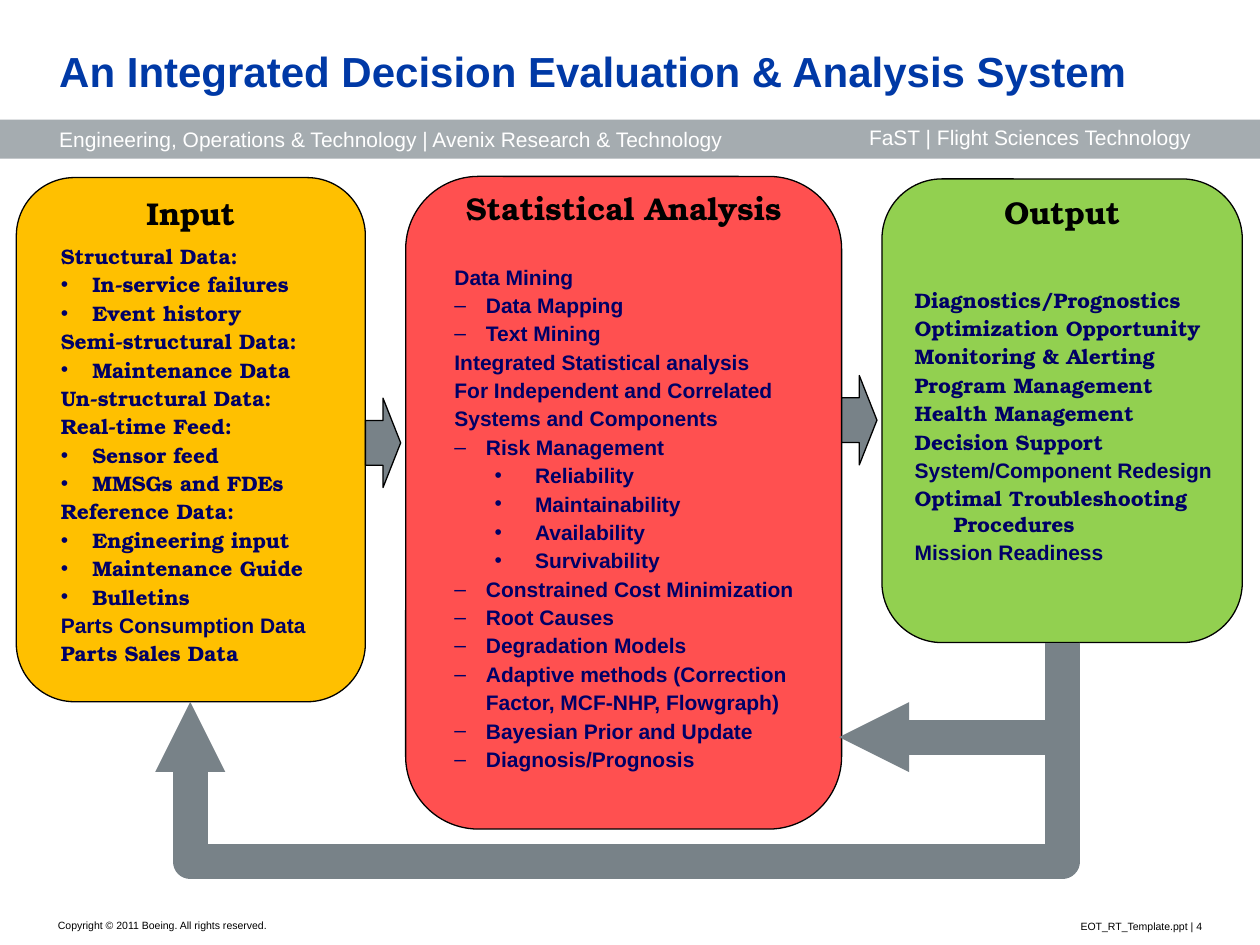
from lxml.etree import SubElement
from pptx import Presentation
from pptx.dml.color import RGBColor
from pptx.enum.shapes import MSO_CONNECTOR as Link, MSO_SHAPE as Kind
from pptx.enum.text import MSO_ANCHOR as Anchor, PP_ALIGN as Align
from pptx.oxml.ns import qn
from pptx.util import Inches, Pt

SANS, SERIF = "Arial", "TeX Gyre Bonum"
NAVY, GREY, BLACK, WHITE = "000066", "788288", "000000", "FFFFFF"

# A grid of 100 columns by 75 rows; boxes are (column, row, columns, rows)
deck = Presentation()
deck.slide_width, deck.slide_height = Inches(10), Inches(7.5)
COL, ROW = deck.slide_width / 100, deck.slide_height / 75


def place(box):
    x, y, w, h = box
    return round(x * COL), round(y * ROW), round(w * COL), round(h * ROW)


def paint(item, color):
    item.rgb = RGBColor.from_string(color)


def style(par, size, color, bold=False, face=SANS):
    for run in par.runs:
        font = run.font
        font.size, font.bold, font.name = Pt(size), bold, face
        paint(font.color, color)


def frame(shape, anchor, pads):
    text = shape.text_frame
    text.word_wrap, text.vertical_anchor = True, anchor
    (text.margin_left, text.margin_top,
     text.margin_right, text.margin_bottom) = map(Inches, pads)
    return text


def solid(slide, kind, box, fill, edge=None):
    shape = slide.shapes.add_shape(kind, *place(box))
    shape.shadow.inherit = False
    shape.fill.solid()
    paint(shape.fill.fore_color, fill)
    if edge:
        paint(shape.line.color, edge)
        shape.line.width = Pt(0.75)
    else:
        shape.line.fill.background()
    return shape


def label(slide, box, words, size, color, align=Align.LEFT, bold=False,
          face=SANS, anchor=Anchor.TOP, pads=(0.1, 0.05, 0.1, 0.05)):
    text = frame(slide.shapes.add_textbox(*place(box)), anchor, pads)
    text.text = words
    par = text.paragraphs[0]
    par.alignment = align
    style(par, size, color, bold, face)


def item(par, words, mark, left, hang, first):
    par.text = words
    par.alignment = Align.LEFT
    props = par._p.get_or_add_pPr()
    props.set("marL", str(Inches(left)))
    props.set("indent", str(Inches(hang)))
    if not first:
        gap = SubElement(props, qn("a:spcBef"))
        SubElement(gap, qn("a:spcPct"), val="15000")
    if mark:
        SubElement(props, qn("a:buFont"), typeface=SANS)
        SubElement(props, qn("a:buChar"), char=mark)
    else:
        SubElement(props, qn("a:buNone"))


def panel(slide, box, fill, head, drop, span, lines, face, steps, pads):
    """Rounded panel; each line starts with a mark that is a key of steps."""
    x, y, w, h = box
    shape = solid(slide, Kind.ROUNDED_RECTANGLE, box, fill, BLACK)
    text = frame(shape, Anchor.MIDDLE, pads)
    for i, line in enumerate(lines):
        par = text.add_paragraph() if i else text.paragraphs[0]
        key = line[0] if line[0] in steps else ""
        mark = key if key in ("•", "–") else ""
        words = line[len(key):]
        item(par, words, mark, *steps[key], first=not i)
        style(par, 12, NAVY, True, SANS if words in PLAIN else face)
    label(slide, (x + (w - span) / 2, y + drop, span, 4), head, 18, BLACK,
          Align.CENTER, True, SERIF)


def loop(slide, start, end, prst, bend=None):
    """Thick elbow arrow that leaves its start downwards."""
    (sx, sy), (ex, ey) = start, end
    w, h = ey - sy, sx - ex
    x, y, w, h = place(((sx + ex - w) / 2, (sy + ey - h) / 2, w, h))
    link = slide.shapes.add_connector(Link.ELBOW, x, y, x + w, y + h)
    paint(link.line.color, GREY)
    link.line.width = Pt(20)
    props = link.element.spPr
    props.find(qn("a:xfrm")).set("rot", str(90 * 60000))
    shape = props.find(qn("a:prstGeom"))
    shape.set("prst", prst)
    if bend:
        SubElement(shape.find(qn("a:avLst")), qn("a:gd"), name="adj1",
                   fmla=f"val {round(bend * 100000)}")
    line = props.find(qn("a:ln"))
    SubElement(line, qn("a:round"))
    SubElement(line, qn("a:tailEnd"), type="triangle", w="sm", len="sm")
    SubElement(props, qn("a:effectLst"))


def header(slide, box):
    x, y, w, h = box
    title = slide.shapes.title
    title.left, title.top, title.width, title.height = place(
        (x + 4.7, y + 2, w - 9.6, 5.7))
    text = frame(title, Anchor.BOTTOM, (0, 0, 0, 0))
    text.text = "An Integrated Decision Evaluation & Analysis System"
    par = text.paragraphs[0]
    par.alignment, par.line_spacing = Align.LEFT, 0.9
    style(par, 24, "0039A6", True)

    band = solid(slide, Kind.RECTANGLE, (x, y + h - 3.1, w, 3.1), "A5ACB0")
    text = frame(band, Anchor.MIDDLE, (0.47, 0, 0, 0))
    text.text = "Engineering, Operations & Technology | Avenix Research & Technology"
    text.paragraphs[0].alignment = Align.LEFT
    style(text.paragraphs[0], 12, WHITE)
    label(slide, (x + w / 2, y + h - 3.2, w / 2, 3),
          "FaST | Flight Sciences Technology ", 12, WHITE, Align.RIGHT,
          pads=(0.5, 0.05, 0.5, 0.05))


def footer(slide, box):
    x, y, w, h = box
    look = dict(anchor=Anchor.BOTTOM, pads=(0.01,) * 4)
    label(slide, (x, y, 22.6, h - 0.1),
          "Copyright © 2011 Boeing. All rights reserved.", 6, BLACK, **look)
    label(slide, (x + w - 19.5, y, 19.5, h), "EOT_RT_Template.ppt | 4", 6,
          BLACK, Align.RIGHT, **look)


# Lines set in the sans face inside the serif panels
PLAIN = {"Parts Consumption Data", "System/Component Redesign",
         "Mission Readiness"}
INPUT = ["Structural Data:", "•In-service failures", "•Event history",
         "Semi-structural Data:", "•Maintenance Data", "Un-structural Data:",
         "Real-time Feed:", "•Sensor feed", "•MMSGs and FDEs",
         "Reference Data:", "•Engineering input", "•Maintenance Guide",
         "•Bulletins", "Parts Consumption Data", "Parts Sales Data"]
STATS = ["Data Mining", "–Data Mapping", "–Text Mining",
         "Integrated Statistical analysis", "For Independent and Correlated",
         "Systems and Components", "–Risk Management", "•Reliability",
         "•Maintainability", "•Availability", "•Survivability",
         "–Constrained Cost Minimization", "–Root Causes",
         "–Degradation Models", "–Adaptive methods (Correction",
         ">Factor, MCF-NHP, Flowgraph)", "–Bayesian Prior and Update",
         "–Diagnosis/Prognosis"]
OUTPUT = ["Diagnostics/Prognostics", "Optimization Opportunity",
          "Monitoring & Alerting", "Program Management", "Health Management",
          "Decision Support", "System/Component Redesign",
          "Optimal Troubleshooting Procedures", "Mission Readiness"]

slide = deck.slides.add_slide(deck.slide_layouts[5])
header(slide, (0, 0, 100, 12.6))

# Three panels; the deeper top inset leaves room for the headings
STEP = (0.37, -0.25)
WIDE = (0.1, 0.29, 0.1, 0.05)
panel(slide, (32.2, 14, 34.6, 51.8), "FF5050", "Statistical Analysis", 0.5,
      29.6, STATS, SANS,
      {"": STEP, "–": STEP, ">": (0.37, 0), "•": (0.76, -0.32)}, WIDE)
panel(slide, (1.3, 14.1, 27.7, 41.6), "FFC000", "Input", 0.8, 17.1, INPUT,
      SERIF, {"": STEP, "•": STEP}, WIDE)
panel(slide, (70, 14.2, 28.6, 36.8), "92D050", "Output", 0.6, 17.1, OUTPUT,
      SERIF, {"": (0.43, -0.31)}, (0, 0.29, 0, 0.05))

# Forward arrows between the panels
for x, y in ((29, 31.6), (66.8, 29.8)):
    solid(slide, Kind.RIGHT_ARROW, (x, y, 2.8, 7.1), GREY, BLACK)

# Feedback arrows from the output panel
loop(slide, (84.3, 51), (15.1, 55.7), "bentConnector3", 3.7)
loop(slide, (84.3, 51), (66.6, 58.5), "bentConnector2")

footer(slide, (4.5, 71.4, 91, 2.7))
deck.save("out.pptx")
